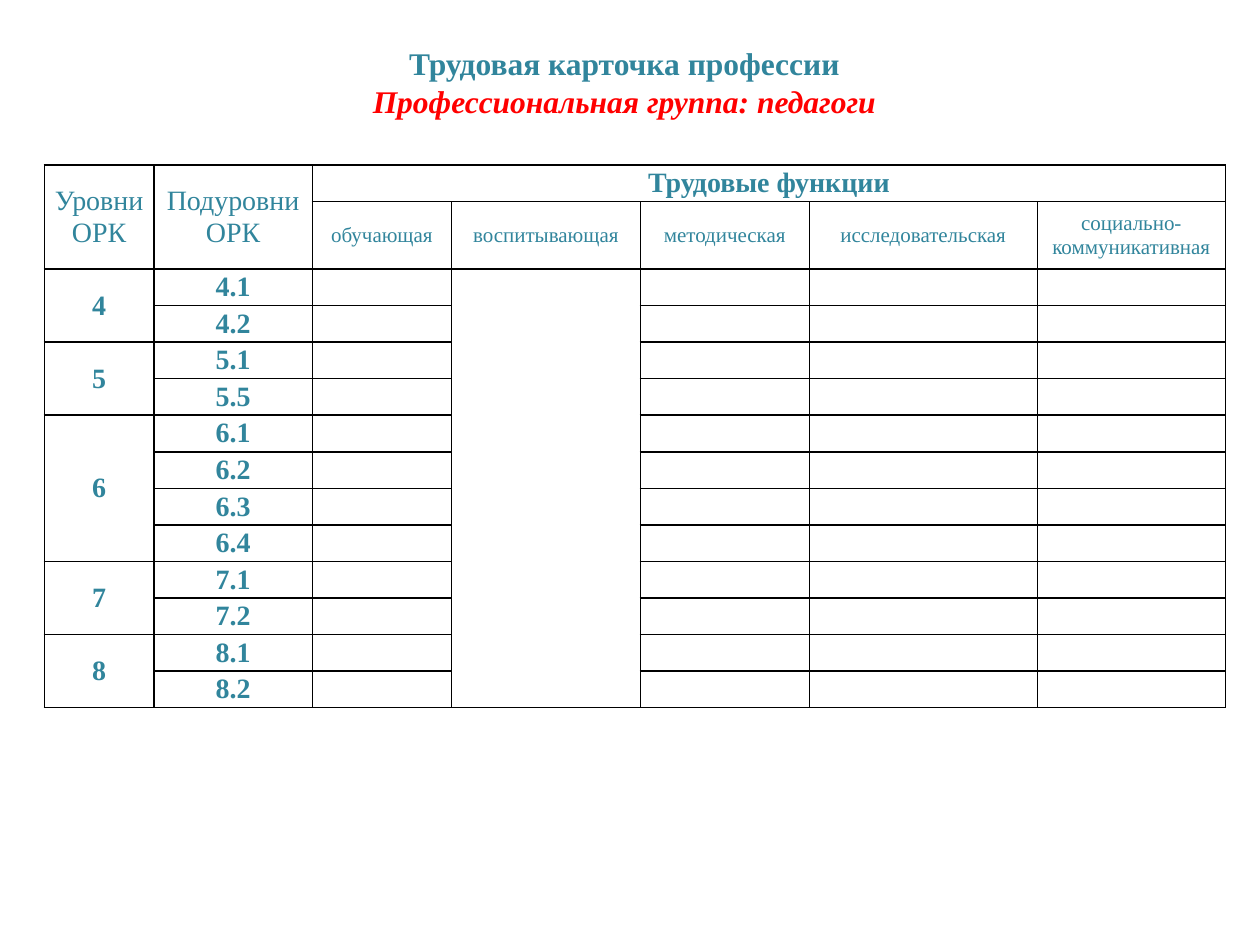
from lxml import etree
from pptx import Presentation
from pptx import util as u
from pptx.dml.color import RGBColor
from pptx.enum import text
from pptx.oxml import ns

TEAL = RGBColor(0x31, 0x85, 0x9C)
RED = RGBColor(0xFF, 0x00, 0x00)
BORDER_COLOR = "000000"
FONT = "Times New Roman"
BODY_SIZE = 16
SMALL_SIZE = 12

COLUMN_WIDTHS = [62.5, 90.7, 79.4, 108, 96.5, 130.3, 107.5]
ROW_HEIGHT = 20.9
FUNCTION_ROW_HEIGHT = 35.6
FUNCTIONS = ["обучающая", "воспитывающая", "методическая",
             "исследовательская", "социально-коммуникативная"]
LEVELS = {
    "4": ["4.1", "4.2"],
    "5": ["5.1", "5.5"],
    "6": ["6.1", "6.2", "6.3", "6.4"],
    "7": ["7.1", "7.2"],
    "8": ["8.1", "8.2"],
}
HEADER_ROWS = 2
FIRST_FUNCTION_COLUMN = 2
MERGED_COLUMN = 3


def format_paragraph(para, size, color=TEAL, bold=False, italic=False):
    para.alignment = text.PP_ALIGN.CENTER
    font = para.font
    font.name, font.size = FONT, u.Pt(size)
    font.bold, font.italic = bold, italic
    font.color.rgb = color


def add_title(page):
    title = page.shapes.title
    title.left, title.top = u.Pt(70.6), u.Pt(20.9)
    title.width, title.height = u.Pt(572.4), u.Pt(51.1)
    frame = title.text_frame
    frame.text = "Трудовая карточка профессии\nПрофессиональная группа: педагоги"
    frame.word_wrap = True
    frame.auto_size = text.MSO_AUTO_SIZE.SHAPE_TO_FIT_TEXT
    frame.vertical_anchor = text.MSO_ANCHOR.TOP
    heading, group = frame.paragraphs
    format_paragraph(heading, 18, bold=True)
    format_paragraph(group, 18, RED, bold=True, italic=True)
    for para in frame.paragraphs:
        para.line_spacing = u.Pt(22)


def add_borders(cell):
    properties = cell._tc.get_or_add_tcPr()
    for index, side in enumerate(("lnL", "lnR", "lnT", "lnB")):
        line = etree.Element(ns.qn(f"a:{side}"), w=str(u.Pt(1)))
        fill = etree.SubElement(line, ns.qn("a:solidFill"))
        etree.SubElement(fill, ns.qn("a:srgbClr"), val=BORDER_COLOR)
        properties.insert(index, line)


def prepare_cell(cell):
    """Give an empty cell its margins, borders and a font that fits the row."""
    cell.margin_left = cell.margin_right = u.Pt(3)
    cell.margin_top = cell.margin_bottom = u.Pt(0)
    cell.vertical_anchor = text.MSO_ANCHOR.MIDDLE
    cell.fill.background()
    add_borders(cell)
    para = cell.text_frame.paragraphs[0]
    etree.SubElement(para._p, ns.qn("a:endParaRPr"), sz=str(BODY_SIZE * 100))


def write_cell(cell, words, size=BODY_SIZE, bold=False):
    cell.text = words
    for para in cell.text_frame.paragraphs:
        format_paragraph(para, size, bold=bold)


def fill_header(table):
    for column, words in enumerate(["Уровни\nОРК", "Подуровни\nОРК"]):
        table.cell(0, column).merge(table.cell(1, column))
        write_cell(table.cell(0, column), words)
    heading = table.cell(0, FIRST_FUNCTION_COLUMN)
    heading.merge(table.cell(0, len(COLUMN_WIDTHS) - 1))
    write_cell(heading, "Трудовые функции", bold=True)
    for column, words in enumerate(FUNCTIONS, FIRST_FUNCTION_COLUMN):
        write_cell(table.cell(1, column), words, SMALL_SIZE)


def fill_levels(table):
    row = HEADER_ROWS
    for level, sublevels in LEVELS.items():
        table.cell(row, 0).merge(table.cell(row + len(sublevels) - 1, 0))
        write_cell(table.cell(row, 0), level, bold=True)
        for sublevel in sublevels:
            write_cell(table.cell(row, 1), sublevel, bold=True)
            row += 1
    table.cell(HEADER_ROWS, MERGED_COLUMN).merge(table.cell(row - 1, MERGED_COLUMN))


def add_level_table(page):
    heights = [ROW_HEIGHT] * (HEADER_ROWS + sum(map(len, LEVELS.values())))
    heights[1] = FUNCTION_ROW_HEIGHT
    table = page.shapes.add_table(
        len(heights), len(COLUMN_WIDTHS), u.Pt(25.4), u.Pt(94.4),
        u.Pt(sum(COLUMN_WIDTHS)), u.Pt(sum(heights))).table
    table.horz_banding = False
    for column, width in zip(table.columns, COLUMN_WIDTHS):
        column.width = u.Pt(width)
    for row, height in zip(table.rows, heights):
        row.height = u.Pt(height)
    for cell in table.iter_cells():
        prepare_cell(cell)
    fill_header(table)
    fill_levels(table)


def main():
    deck = Presentation()
    deck.slide_width, deck.slide_height = u.Pt(720), u.Pt(540)
    page = deck.slides.add_slide(deck.slide_layouts[5])
    add_title(page)
    add_level_table(page)
    deck.save("out.pptx")


if __name__ == "__main__":
    main()
